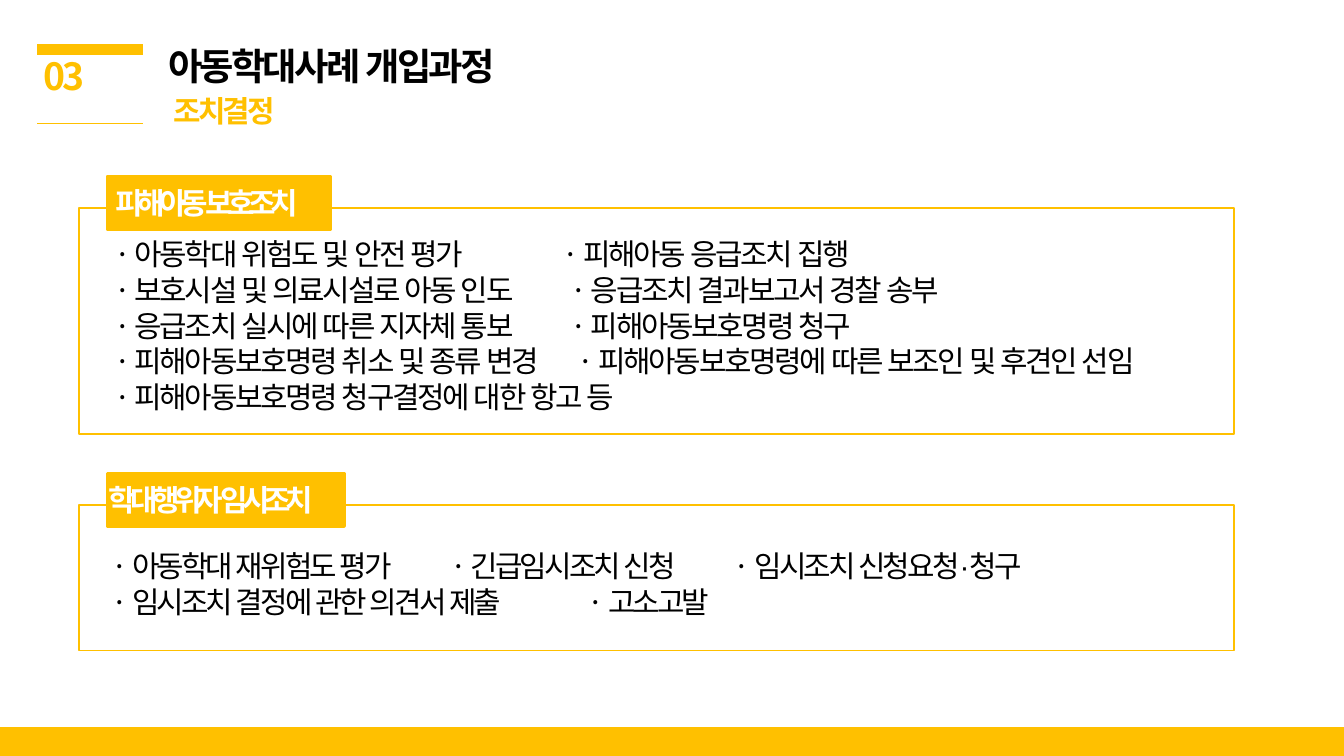
from pptx import Presentation
from pptx.util import Pt
from pptx.dml.color import RGBColor as RGB
from pptx.enum.shapes import MSO_CONNECTOR as Line, MSO_SHAPE as Shape
from pptx.enum.text import MSO_ANCHOR as Anchor, PP_ALIGN as Align
from pptx.oxml.ns import qn
from lxml.etree import SubElement as Sub

COLORS = {"gold": "FFC000", "black": "000000", "white": "FFFFFF"}
NOTO, ARIAL = "Noto Sans CJK KR", "Arial"
WIDE, HIGH = 720, 405

HEADS = [("아동학대사례 개입과정", 20, "black"), (" 조치결정", 16, "gold")]
PANELS = [
    {
        "name": "피해아동 보호조치", "top": 111.6, "high": 121,
        "tag": 119.5, "inset": 4.3,
        "left": 54, "text": 123.1, "space": -1.2,
        "rows": [
            (["아동학대 위험도 및 안전 평가", "피해아동 응급조치 집행"], [240.5]),
            (["보호시설 및 의료시설로 아동 인도", "응급조치 결과보고서 경찰 송부"], [244.5]),
            (["응급조치 실시에 따른 지자체 통보", "피해아동보호명령 청구"], [244.5]),
            (["피해아동보호명령 취소 및 종류 변경",
              "피해아동보호명령에 따른 보조인 및 후견인 선임"], [248.5]),
            (["피해아동보호명령 청구결정에 대한 항고 등"], []),
        ],
    },
    {
        "name": "학대행위자 임시조치", "top": 270.5, "high": 78,
        "tag": 126.7, "inset": 0.7,
        "left": 52.6, "text": 290.2, "space": -1.5,
        "rows": [
            (["아동학대 재위험도 평가", "긴급임시조치 신청",
              "임시조치 신청요청·청구"], [181.5, 333.5]),
            (["임시조치 결정에 관한 의견서 제출", "고소고발"], [255]),
        ],
    },
]

deck = Presentation()
deck.slide_width, deck.slide_height = Pt(WIDE), Pt(HIGH)
slide = deck.slides.add_slide(deck.slide_layouts[5])


def color(key):
    return RGB.from_string(COLORS[key])


def write(para, text, size, key, space, bold=False, face=NOTO):
    run = para.add_run()
    run.text = text
    font = run.font
    font.size, font.bold, font.name = Pt(size), bold, face
    font.color.rgb = color(key)
    props = run._r.get_or_add_rPr()
    props.set("spc", str(round(space * 100)))
    props.set("lang", "ko-KR")
    Sub(props, qn("a:ea")).set("typeface", NOTO)


def frame(shape, left=7.2, anchor=Anchor.TOP):
    body = shape.text_frame
    body.word_wrap = True
    body.vertical_anchor = anchor
    body.margin_left, body.margin_right = Pt(left), Pt(0)
    body.margin_top = body.margin_bottom = Pt(3.6)
    return body


def lines(body, count, size=16):
    for num in range(count):
        para = body.paragraphs[0] if num == 0 else body.add_paragraph()
        para.alignment = Align.LEFT
        para.line_spacing = Pt(size * 1.19)
        para.space_before = Pt(0)
        yield para


def box(left, top, wide, high, fill=None, line=None):
    shape = slide.shapes.add_shape(
        Shape.RECTANGLE, Pt(left), Pt(top), Pt(wide), Pt(high))
    shape.shadow.inherit = False
    if fill:
        shape.fill.solid()
        shape.fill.fore_color.rgb = color(fill)
    else:
        shape.fill.background()
    if line:
        shape.line.color.rgb = color("gold")
        shape.line.width = Pt(line)
    else:
        shape.line.fill.background()
    return shape


def label(left, top, wide, high):
    return frame(slide.shapes.add_textbox(Pt(left), Pt(top), Pt(wide), Pt(high)))


def rule(top, width):
    line = slide.shapes.add_connector(
        Line.STRAIGHT, Pt(20), Pt(top), Pt(76.5), Pt(top))
    line.line.color.rgb = color("gold")
    line.line.width = Pt(width)
    Sub(line._element.spPr, qn("a:effectLst"))


def stops(para, spots):
    tabs = Sub(para._p.get_or_add_pPr(), qn("a:tabLst"))
    for spot in spots:
        tab = Sub(tabs, qn("a:tab"))
        tab.set("pos", str(Pt(spot)))
        tab.set("algn", "l")


def panel(data):
    box(42.5, data["top"], 618.5, data["high"], line=1)
    tag = box(57.6, data["top"] - 16.8, data["tag"], 28, "gold", 2)
    body = frame(tag, data["inset"], Anchor.MIDDLE)
    body.word_wrap = False
    for para in lines(body, 1):
        write(para, data["name"], 16, "white", -3, True)
    rows = data["rows"]
    body = label(data["left"], data["text"], 608, len(rows) * 19 + 7.2)
    for para, (items, spots) in zip(lines(body, len(rows)), rows):
        if spots:
            stops(para, spots)
        for num, item in enumerate(items):
            write(para, "\t· " if num else "· ", 16, "black", -1.5)
            write(para, item, 16, "black", data["space"], face=ARIAL)


rule(26.6, 6)
rule(66.2, 1)
box(0, 389.5, WIDE, 15.5, "gold")

body = label(2.9, 25.2, 62.6, 31.7)
body.margin_right = Pt(7.2)
for para in lines(body, 1, 20):
    para.alignment = Align.CENTER
    write(para, "03", 20, "gold", -1.5, True)

title = slide.shapes.title
title.left, title.top, title.width, title.height = Pt(82.8), Pt(22.3), Pt(516), Pt(51)
body = frame(title)
for para, (text, size, key) in zip(lines(body, len(HEADS), 18), HEADS):
    write(para, text, size, key, -1.5, True)

for data in PANELS:
    panel(data)

deck.save("out.pptx")
